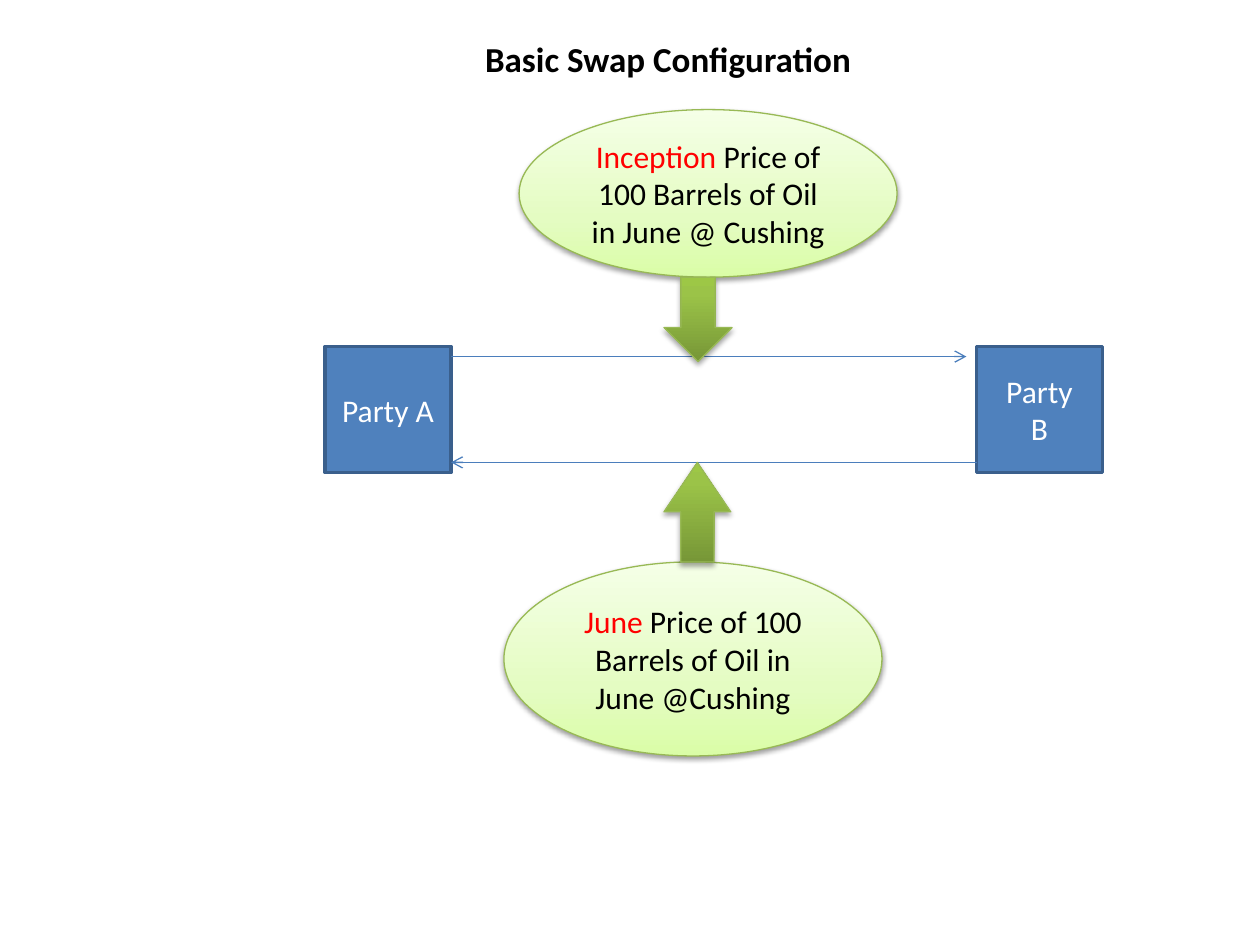
import pptx
import pptx.dml.color
import pptx.enum.shapes
import pptx.enum.text
import pptx.oxml
import pptx.oxml.ns
import pptx.util

Inches = pptx.util.Inches
Pt = pptx.util.Pt
RGBColor = pptx.dml.color.RGBColor
Shape = pptx.enum.shapes.MSO_SHAPE
Align = pptx.enum.text.PP_ALIGN
Anchor = pptx.enum.text.MSO_ANCHOR

BLUE = RGBColor(0x4F, 0x81, 0xBD)
BLUE_EDGE = RGBColor(0x3A, 0x5F, 0x8C)
BLUE_LINE = RGBColor(0x4B, 0x7E, 0xBC)
GREEN_EDGE = RGBColor(0x98, 0xB9, 0x55)
WHITE = RGBColor(0xFF, 0xFF, 0xFF)
BLACK = RGBColor(0, 0, 0)
RED = RGBColor(0xFF, 0, 0)

# Gradient stops from bottom to top: percent, colour
PALE_GREEN = [(0, RGBColor(0xDA, 0xFD, 0xA7)),
              (35, RGBColor(0xE4, 0xFC, 0xC2)),
              (100, RGBColor(0xF5, 0xFF, 0xE7))]
DEEP_GREEN = [(0, RGBColor(0x77, 0x97, 0x37)),
              (80, RGBColor(0x9B, 0xC3, 0x48)),
              (100, RGBColor(0x9D, 0xC7, 0x46))]


def add_element(parent, xml):
    """Append a drawing element given as a short template."""
    head, rest = xml.split(" ", 1)
    namespace = pptx.oxml.ns.nsdecls("a")
    parent.append(pptx.oxml.parse_xml(f"{head} {namespace} {rest}"))


def write_text(frame, paragraphs, align, **extra):
    """Fill a text frame; each paragraph is a list of (text, colour)."""
    frame.word_wrap = True
    formats = {"name": "Calibri", "size": Pt(18), **extra}
    for index, spans in enumerate(paragraphs):
        para = frame.add_paragraph() if index else frame.paragraphs[0]
        para.alignment = align
        for text, colour in spans:
            span = para.add_run()
            span.text = text
            span.font.color.rgb = colour
            for key, value in formats.items():
                setattr(span.font, key, value)


def add_box(page, kind, place, edge, width):
    box = page.shapes.add_shape(kind, *map(Inches, place))
    box.shadow.inherit = False
    box.line.color.rgb = edge
    box.line.width = Pt(width)
    box.text_frame.vertical_anchor = Anchor.MIDDLE
    return box


def add_party(page, left, lines):
    box = add_box(page, Shape.RECTANGLE, (left, 2.75, 1, 1), BLUE_EDGE, 2)
    box.fill.solid()
    box.fill.fore_color.rgb = BLUE
    write_text(box.text_frame, [[(line, WHITE)] for line in lines], Align.CENTER)


def add_green_shape(page, kind, place, stops, opacity, distance):
    """Add a shape with a vertical gradient and a soft shadow below."""
    box = add_box(page, kind, place, GREEN_EDGE, 0.75)
    box.fill.gradient()
    box.fill.gradient_angle = 90
    properties = box.element.spPr
    stop_list = properties.find(".//" + pptx.oxml.ns.qn("a:gsLst"))
    stop_list.clear()
    for percent, colour in stops:
        add_element(stop_list, f'<a:gs pos="{percent * 1000}">'.replace(">", " >")
                    + f'<a:srgbClr val="{colour}"/></a:gs>')
    add_element(properties.find(pptx.oxml.ns.qn("a:effectLst")),
                f'<a:outerShdw blurRad="{Pt(3.1)}" dist="{Pt(distance)}" '
                'dir="5400000" rotWithShape="0"><a:srgbClr val="000000">'
                f'<a:alpha val="{opacity * 1000}"/></a:srgbClr></a:outerShdw>')
    return box


def add_price(page, place, lead, rest):
    box = add_green_shape(page, Shape.OVAL, place, PALE_GREEN, 38, 1.6)
    write_text(box.text_frame, [[(lead, RED), (rest, BLACK)]], Align.CENTER)


def add_block_arrow(page, kind, place, head):
    arrow = add_green_shape(page, kind, place, DEEP_GREEN, 35, 1.8)
    arrow.adjustments[0] = 0.5
    arrow.adjustments[1] = head


def add_flow(page, start, end, height):
    line = page.shapes.add_connector(
        pptx.enum.shapes.MSO_CONNECTOR.STRAIGHT,
        *map(Inches, (start, height, end, height)))
    line.line.color.rgb = BLUE_LINE
    line.line.width = Pt(0.75)
    add_element(line.line._get_or_add_ln(), '<a:tailEnd type="arrow"/>')
    add_element(line.element.spPr, "<a:effectLst />")


def add_title(page, text):
    box = page.shapes.add_textbox(*map(Inches, (2.75, 0.25, 5.17, 0.44)))
    box.text_frame.margin_left = Inches(1.1)
    write_text(box.text_frame, [[(text, BLACK)]], Align.LEFT,
               size=Pt(20), bold=True)


def main():
    deck = pptx.Presentation()
    deck.slide_width, deck.slide_height = Inches(10), Inches(7.5)
    page = deck.slides.add_slide(deck.slide_layouts[6])

    # The two parties and the payments between them
    add_party(page, 2.58, ["Party A"])
    add_party(page, 7.75, ["Party", "B"])
    add_flow(page, 7.75, 3.58, 3.67)
    add_flow(page, 3.58, 7.67, 2.83)

    # Price descriptions pointing at their payments
    add_price(page, (4, 4.46, 3, 1.54), "June",
              " Price of 100 Barrels of Oil in June @Cushing")
    add_price(page, (4.12, 0.87, 3, 1.33), "Inception",
              " Price of 100 Barrels of Oil in June @ Cushing")
    add_block_arrow(page, Shape.UP_ARROW, (5.27, 3.67, 0.53, 0.79), 0.74)
    add_block_arrow(page, Shape.DOWN_ARROW, (5.27, 2.2, 0.54, 0.67), 0.5)

    add_title(page, "Basic Swap Configuration")
    deck.save("out.pptx")


if __name__ == "__main__":
    main()
